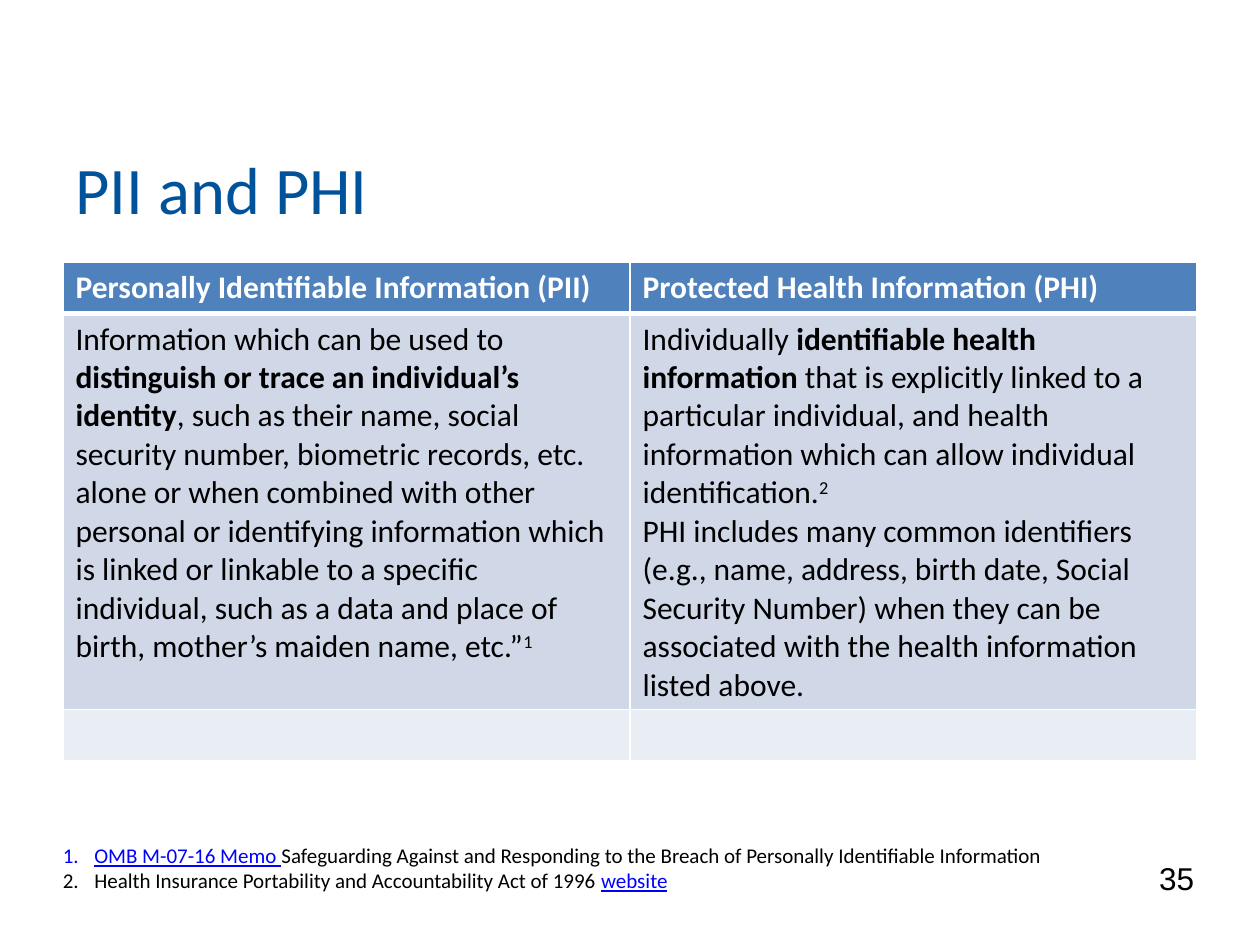
from lxml.etree import SubElement
from pptx import Presentation
from pptx.dml.color import RGBColor
from pptx.enum.text import MSO_ANCHOR, PP_ALIGN
from pptx.oxml import parse_xml
from pptx.oxml.ns import nsdecls, qn
from pptx.util import Inches, Pt

COLORS = {
    "title": "00529B", "text": "000000", "link": "0000FF", "white": "FFFFFF",
    "header": "4F81BD", "body": "D0D8E8", "empty": "E9EDF4",
}
HEADERS = ["Personally Identifiable Information (PII)",
           "Protected Health Information (PHI)"]
# Each cell is a list of paragraphs; each paragraph a list of (text, style).
DEFINITIONS = [
    [[("Information which can be used to ", ""),
      ("distinguish or trace an individual’s identity", "bold"),
      (", such as their name, social security number, biometric records, etc. "
       "alone or when combined with other personal or identifying information "
       "which is linked or linkable to a specific individual, such as a data "
       "and place of birth, mother’s maiden name, etc.”", ""),
      ("1", "super")]],
    [[("Individually ", ""),
      ("identifiable health information ", "bold"),
      ("that is explicitly linked to a particular individual, and health "
       "information which can allow individual identification.", ""),
      ("2", "super")],
     [("PHI includes many common identifiers (e.g., name, address, birth date, "
       "Social Security Number) when they can be associated with the health "
       "information listed above.", "")]],
]
SOURCES = [
    [("OMB M-07-16 Memo ", "link"),
     ("Safeguarding Against and Responding to the Breach of Personally "
      "Identifiable Information", "")],
    [("Health Insurance Portability and Accountability Act of 1996 ", ""),
     ("website", "link")],
]


def add_span(para, text, size, color="text", style="", font="Calibri"):
    span = para.add_run()
    span.text = text
    span.font.name = font
    span.font.size = Pt(size)
    span.font.bold = style == "bold"
    span.font.color.rgb = RGBColor.from_string(COLORS[color])
    if style == "link":
        span.font.underline = True
        span.font.color.rgb = RGBColor.from_string(COLORS["link"])
    elif style == "super":
        span.font._element.set("baseline", "30000")


def write_paragraphs(frame, paragraphs, size, color="text"):
    for index, spans in enumerate(paragraphs):
        para = frame.paragraphs[0] if index == 0 else frame.add_paragraph()
        for text, style in spans:
            add_span(para, text, size, color, style)


def add_title(page, text):
    title = page.shapes.title
    title.left, title.top = Inches(0.5), Inches(1.16)
    title.width, title.height = Inches(9), Inches(0.67)
    title.text_frame.vertical_anchor = MSO_ANCHOR.MIDDLE
    para = title.text_frame.paragraphs[0]
    para.alignment = PP_ALIGN.LEFT
    add_span(para, text, 38, "title")


def add_box(page, left, top, width, height):
    box = page.shapes.add_textbox(Inches(left), Inches(top),
                                  Inches(width), Inches(height))
    box.text_frame.word_wrap = True
    return box.text_frame


def set_borders(cell, top, bottom):
    """Draw white borders; top and bottom are widths in points."""
    properties = cell._tc.get_or_add_tcPr()
    widths = {"lnL": 1, "lnR": 1, "lnT": top, "lnB": bottom}
    for index, (side, width) in enumerate(widths.items()):
        line = parse_xml(
            f'<a:{side} {nsdecls("a")} w="{Pt(width)}"><a:solidFill>'
            f'<a:srgbClr val="{COLORS["white"]}"/></a:solidFill></a:{side}>')
        properties.insert(index, line)


def add_comparison(page):
    rows = [
        ("header", 0.41, "white", 1, 3,
         [[[(header, "bold")]] for header in HEADERS]),
        ("body", 3.14, "text", 3, 1, DEFINITIONS),
        ("empty", 0.41, "text", 1, 1, [[], []]),
    ]
    height = sum(row[1] for row in rows)
    table = page.shapes.add_table(len(rows), 2, Inches(0.5), Inches(2.08),
                                  Inches(9), Inches(height)).table
    for index, (fill, height, color, top, bottom, contents) in enumerate(rows):
        table.rows[index].height = Inches(height)
        for cell, paragraphs in zip(table.rows[index].cells, contents):
            cell.fill.solid()
            cell.fill.fore_color.rgb = RGBColor.from_string(COLORS[fill])
            set_borders(cell, top, bottom)
            write_paragraphs(cell.text_frame, paragraphs, 18, color)


def add_sources(page):
    frame = add_box(page, 0.4, 6.64, 8.05, 0.5)
    write_paragraphs(frame, SOURCES, 12)
    for para in frame.paragraphs:
        properties = para._p.get_or_add_pPr()
        properties.set("marL", str(Inches(0.25)))
        properties.set("indent", str(-Inches(0.25)))
        SubElement(properties, qn("a:buFont"), typeface="+mj-lt")
        SubElement(properties, qn("a:buAutoNum"), type="arabicPeriod")


def main():
    deck = Presentation()
    deck.slide_width, deck.slide_height = Inches(10), Inches(7.5)
    page = deck.slides.add_slide(deck.slide_layouts[5])
    add_title(page, "PII and PHI")
    number = add_box(page, 9.1, 6.77, 0.81, 0.38)
    add_span(number.paragraphs[0], "35", 18, font="Arial")
    add_comparison(page)
    add_sources(page)
    deck.save("out.pptx")


if __name__ == "__main__":
    main()
